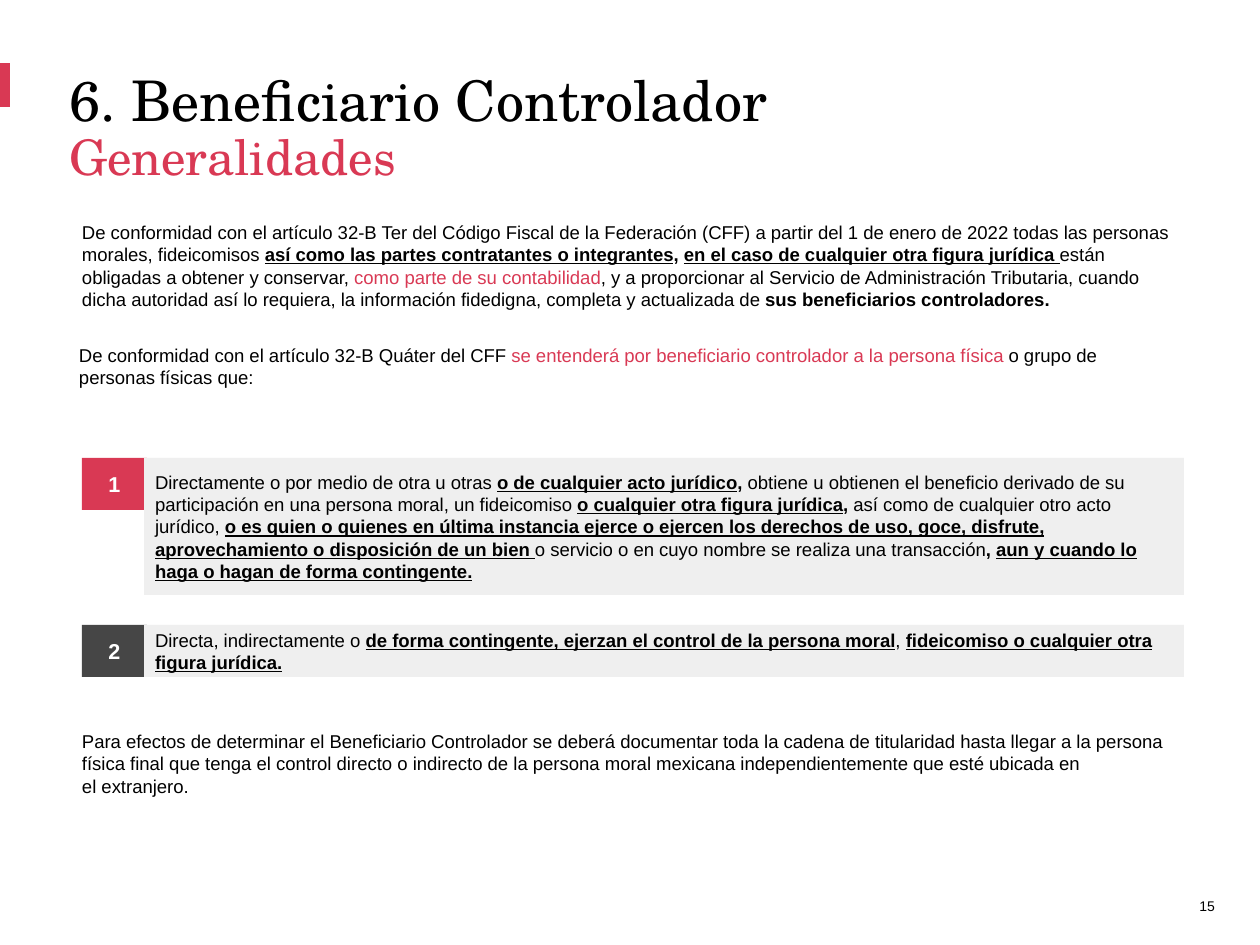
from copy import deepcopy

from pptx import Presentation
from pptx.dml.color import RGBColor
from pptx.enum.shapes import MSO_SHAPE
from pptx.enum.text import MSO_ANCHOR, PP_ALIGN
from pptx.util import Pt

EMU_PER_PX = 914400 / 126
PAGE_WIDTH, PAGE_HEIGHT = 1260, 945

RED = RGBColor(0xD9, 0x39, 0x54)
DARK_GRAY = RGBColor(0x46, 0x46, 0x46)
LIGHT_GRAY = RGBColor(0xEF, 0xEF, 0xEF)
BLACK = RGBColor(0x00, 0x00, 0x00)
WHITE = RGBColor(0xFF, 0xFF, 0xFF)

BODY_FONT, TITLE_FONT = "Arial", "TeX Gyre Schola"
BODY_SIZE = 10.6

PLAIN = {}
BOLD = {"bold": True}
STRESSED = {"bold": True, "underline": True}
HIGHLIGHT = {"color": RED}

INTRODUCTION = [
    ("De conformidad con el artículo 32-B Ter del Código Fiscal de la Federación (CFF) a partir "
     "del 1 de enero de 2022 todas las personas morales, fideicomisos ", PLAIN),
    ("así como las partes contratantes o integrantes", STRESSED),
    (", ", BOLD),
    ("en el caso de cualquier otra figura jurídica ", STRESSED),
    ("están obligadas a obtener y conservar, ", PLAIN),
    ("como parte de su contabilidad", HIGHLIGHT),
    (", y a proporcionar al Servicio de Administración Tributaria, cuando dicha autoridad así lo "
     "requiera, la información fidedigna, completa y actualizada de ", PLAIN),
    ("sus beneficiarios controladores.", BOLD),
]
DEFINITION = [
    ("De conformidad con el artículo 32-B Quáter del CFF ", PLAIN),
    ("se entenderá por beneficiario controlador a la persona física ", HIGHLIGHT),
    ("o grupo de personas físicas que:", PLAIN),
]
DIRECT_BENEFIT = [
    ("Directamente o por medio de otra u otras ", PLAIN),
    ("o de cualquier acto jurídico", STRESSED),
    (",", BOLD),
    (" obtiene u obtienen el beneficio derivado de su participación en una persona moral, "
     "un fideicomiso ", PLAIN),
    ("o cualquier otra figura jurídica", STRESSED),
    (", ", BOLD),
    ("así como de cualquier otro acto jurídico, ", PLAIN),
    ("o es quien o quienes en última instancia ejerce o ejercen los derechos de uso, goce, "
     "disfrute, aprovechamiento o disposición de un bien ", STRESSED),
    ("o servicio o en cuyo nombre se realiza una transacción", PLAIN),
    (", ", BOLD),
    ("aun y cuando lo haga o hagan de forma contingente.", STRESSED),
]
CONTROL = [
    ("Directa, indirectamente o ", PLAIN),
    ("de forma contingente, ejerzan el control de la persona moral", STRESSED),
    (", ", PLAIN),
    ("fideicomiso o cualquier otra figura jurídica.", STRESSED),
]
CLOSING = [
    ("Para efectos de determinar el Beneficiario Controlador se deberá documentar toda la cadena "
     "de titularidad hasta llegar a la persona física final que tenga el control directo o "
     "indirecto de la persona moral mexicana independientemente que esté ubicada en\n"
     "el extranjero.", PLAIN),
]


def px(length):
    return round(length * EMU_PER_PX)


def format_run(run, size=BODY_SIZE, font=BODY_FONT, color=BLACK, bold=False, underline=False):
    run.font.size = Pt(size)
    run.font.name = font
    run.font.color.rgb = color
    run.font.bold = bold
    run.font.underline = underline


def write_segments(paragraph, segments):
    """Add styled runs; a newline inside a segment becomes a line break of the same size."""
    for text, style in segments:
        for index, line in enumerate(text.split("\n")):
            if index:
                line_break = paragraph._p.add_br()
                line_break.append(deepcopy(run.font._element))
            run = paragraph.add_run()
            run.text = line
            format_run(run, **style)


def set_frame(shape, inset, anchor):
    frame = shape.text_frame
    frame.word_wrap = True
    frame.vertical_anchor = anchor
    frame.margin_left = frame.margin_right = px(inset)
    frame.margin_top = frame.margin_bottom = px(inset)
    return frame


def add_text(slide, left, top, width, height, segments, anchor=MSO_ANCHOR.TOP):
    box = slide.shapes.add_textbox(px(left), px(top), px(width), px(height))
    frame = set_frame(box, 0, anchor)
    write_segments(frame.paragraphs[0], segments)
    return frame


def add_block(slide, left, top, width, height, color):
    block = slide.shapes.add_shape(
        MSO_SHAPE.RECTANGLE, px(left), px(top), px(width), px(height))
    block.shadow.inherit = False
    block.fill.solid()
    block.fill.fore_color.rgb = color
    block.line.fill.background()
    return block


def add_title(slide, left, top, width, height):
    title_style = {"size": 32, "font": TITLE_FONT}
    subtitle_style = {"size": 28, "font": TITLE_FONT, "color": RED}
    frame = add_text(slide, left, top, width, height,
                     [("6. Beneficiario Controlador", title_style)])
    write_segments(frame.add_paragraph(), [("Generalidades", subtitle_style)])
    for paragraph in frame.paragraphs:
        paragraph.line_spacing = 0.9


def add_numbered_row(slide, left, top, width, height, number, color, segments):
    """Draw a number badge with a text panel that overlaps its right edge."""
    badge_width, badge_height, panel_offset, inset = 65, 52, 62, 11
    badge = add_block(slide, left, top, badge_width, badge_height, color)
    panel = add_block(slide, left + panel_offset, top, width - panel_offset, height, LIGHT_GRAY)
    number_style = {"size": 12.3, "color": WHITE, "bold": True}
    for block, content, alignment in (
        (badge, [(str(number), number_style)], PP_ALIGN.CENTER),
        (panel, segments, PP_ALIGN.LEFT),
    ):
        paragraph = set_frame(block, inset, MSO_ANCHOR.MIDDLE).paragraphs[0]
        paragraph.alignment = alignment
        write_segments(paragraph, content)


def add_page_number(slide, left, top, width, height, number):
    frame = add_text(slide, left, top, width, height, [(str(number), {"size": 8})],
                     MSO_ANCHOR.BOTTOM)
    frame.paragraphs[0].alignment = PP_ALIGN.RIGHT


def main():
    presentation = Presentation()
    presentation.slide_width = px(PAGE_WIDTH)
    presentation.slide_height = px(PAGE_HEIGHT)
    slide = presentation.slides.add_slide(presentation.slide_layouts[6])

    add_page_number(slide, 1032, 895, 183, 19, 15)
    add_block(slide, 0, 63, 10, 44, RED)
    add_title(slide, 69, 73, 1114, 55)
    add_text(slide, 82, 221, 1101, 112, INTRODUCTION)
    add_text(slide, 79, 344, 1097, 77, DEFINITION)
    add_numbered_row(slide, 82, 458, 1102, 137, 1, RED, DIRECT_BENEFIT)
    add_numbered_row(slide, 82, 625, 1102, 52, 2, DARK_GRAY, CONTROL)
    add_text(slide, 82, 730, 1101, 72, CLOSING)

    presentation.save("out.pptx")


if __name__ == "__main__":
    main()
